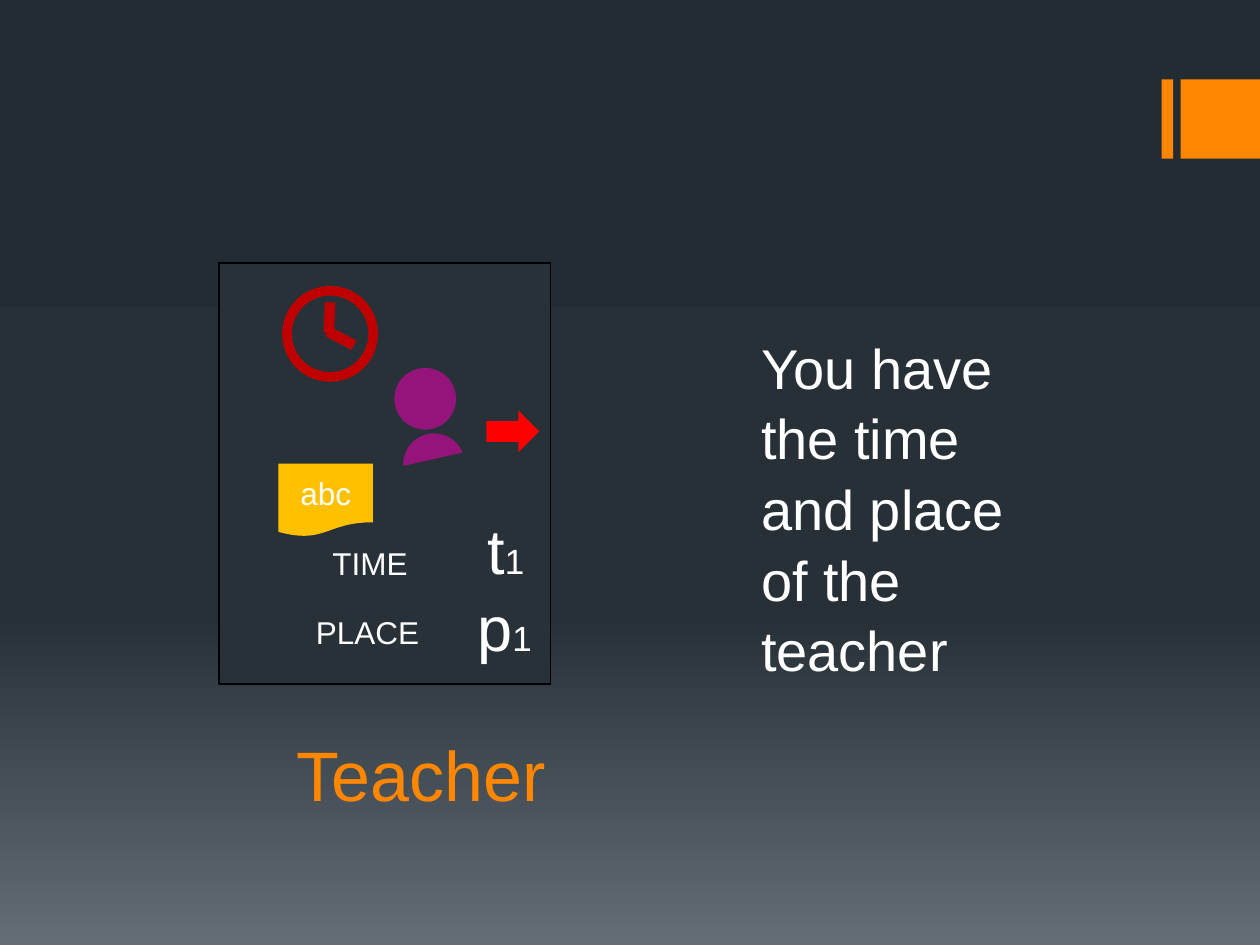
from copy import deepcopy
from dataclasses import dataclass

from lxml import etree
from pptx import Presentation
from pptx.dml.color import RGBColor
from pptx.enum.shapes import MSO_CONNECTOR, MSO_SHAPE
from pptx.enum.text import MSO_ANCHOR, MSO_AUTO_SIZE, PP_ALIGN
from pptx.oxml.ns import qn
from pptx.util import Pt

RECT, OVAL, CHORD = MSO_SHAPE.RECTANGLE, MSO_SHAPE.OVAL, MSO_SHAPE.CHORD
RING, ARROW = MSO_SHAPE.DONUT, MSO_SHAPE.RIGHT_ARROW
NOTE = MSO_SHAPE.FLOWCHART_DOCUMENT
LINE = MSO_CONNECTOR.STRAIGHT
LEFT, CENTER = PP_ALIGN.LEFT, PP_ALIGN.CENTER
TOP, MIDDLE, BOTTOM = MSO_ANCHOR.TOP, MSO_ANCHOR.MIDDLE, MSO_ANCHOR.BOTTOM
PX = 9144  # EMU per px, 100 px to the inch


@dataclass(frozen=True)
class Theme:
    font: str = "Arial"
    sky: tuple = ((0, "242C33"), (0.65, "273037"), (1, "636D76"))
    accent: str = "FF8600"
    card: str = "283138"
    edge: str = "000000"
    text: str = "FFFFFF"
    note: str = "FFC000"
    arrow: str = "FF0000"
    person: str = "94147C"
    clock: str = "C00000"
    title: int = 40
    value: int = 36
    body: int = 32
    sub: int = 20
    label: int = 18


T = Theme()


def rgb(code):
    return RGBColor.from_string(code)


def emu(*px):
    return [n * PX for n in px]


def place(item, box):
    item.left, item.top, item.width, item.height = emu(*box)


def shape(slide, kind, box, fill, line=None, turn=0, adjust=()):
    item = slide.shapes.add_shape(kind, *emu(*box))
    item.shadow.inherit = False
    item.fill.solid()
    item.fill.fore_color.rgb = rgb(fill)
    if line:
        item.line.color.rgb = rgb(line)
        item.line.width = Pt(1)
    else:
        item.line.fill.background()
    item.rotation = turn
    for i, value in enumerate(adjust):
        item.adjustments[i] = value
    return item


def write(item, runs, align=LEFT, anchor=TOP, wrap=True, color=T.text):
    frame = item.text_frame
    frame.auto_size = MSO_AUTO_SIZE.NONE
    frame.word_wrap = wrap
    frame.vertical_anchor = anchor
    para = frame.paragraphs[0]
    para.alignment = align
    for text, size in runs:
        run = para.add_run()
        run.text = text
        run.font.name = T.font
        run.font.size = Pt(size)
        run.font.color.rgb = rgb(color)
    return para


def label(slide, box, *runs):
    write(slide.shapes.add_textbox(*emu(*box)), runs, wrap=False)


def hand(slide, x1, y1, x2, y2):
    item = slide.shapes.add_connector(LINE, *emu(x1, y1, x2, y2))
    item.line.color.rgb = rgb(T.clock)
    item.line.width = Pt(6)
    etree.SubElement(item._element.spPr, qn("a:effectLst"))


def backdrop(slide):
    fill = slide.background.fill
    fill.gradient()
    fill.gradient_angle = 270  # top to bottom
    stops = slide.element.find(".//" + qn("a:gsLst"))
    stops.append(deepcopy(stops[0]))
    for stop, (spot, code) in zip(fill.gradient_stops, T.sky):
        stop.position = spot
        stop.color.rgb = rgb(code)


def badge(slide, x, y, w, h):
    shape(slide, RECT, (x, y, 9, h), T.accent)
    shape(slide, RECT, (x + 15, y, w - 15, h), T.accent)


def clock(slide, x, y, size):
    shape(slide, RING, (x, y, size, size), T.clock, adjust=(0.1,))
    hand(slide, x + 37, y + 37, x + 38, y + 13)
    hand(slide, x + 57, y + 47, x + 36, y + 36)


def person(slide, x, y, size):
    shape(slide, OVAL, (x, y, size, size), T.person, turn=14.7)
    shape(slide, CHORD, (x + 7, y + 52, size, size), T.person,
          turn=107.2, adjust=(41.79, 138.21))


def card(slide, x, y, w, h):
    shape(slide, RECT, (x, y, w, h), T.card, line=T.edge)
    note = shape(slide, NOTE, (x + 47, y + 159, 75, 58), T.note)
    write(note, [("abc", T.label)], CENTER, MIDDLE)
    shape(slide, ARROW, (x + 212, y + 117, 42, 33), T.arrow)
    person(slide, x + 139, y + 83, 49)
    clock(slide, x + 50, y + 18, 76)
    # Time and place, each with its value
    label(slide, (x + 80, y + 218, 81, 40), ("TIME", T.label))
    label(slide, (x + 203, y + 192, 50, 71), ("t", T.value), ("1", T.sub))
    label(slide, (x + 67, y + 273, 103, 40), ("PLACE", T.label))
    label(slide, (x + 195, y + 253, 64, 71), ("p", T.value), ("1", T.sub))


def heading(slide, *box):
    title = slide.shapes.title
    place(title, box)
    write(title, [("Teacher", T.title)], CENTER, BOTTOM, color=T.accent)


def message(slide, *box):
    body = slide.placeholders[1]
    place(body, box)
    text = "You have the time and place of the teacher"
    para = write(body, [(text, T.body)])
    para.space_before = Pt(0)
    para.line_spacing = 1.05
    # Plain paragraph: no bullet, no hanging indent
    props = para._p.get_or_add_pPr()
    props.set("marL", "0")
    props.set("indent", "0")
    etree.SubElement(props, qn("a:buNone"))


def main():
    deck = Presentation()
    deck.slide_width, deck.slide_height = emu(1000, 750)
    slide = deck.slides.add_slide(deck.slide_layouts[1])
    backdrop(slide)
    badge(slide, 922, 63, 78, 63)
    card(slide, 174, 209, 263, 334)
    heading(slide, 224, 575, 220, 77)
    message(slide, 594, 257, 260, 279)
    deck.save("out.pptx")


if __name__ == "__main__":
    main()
